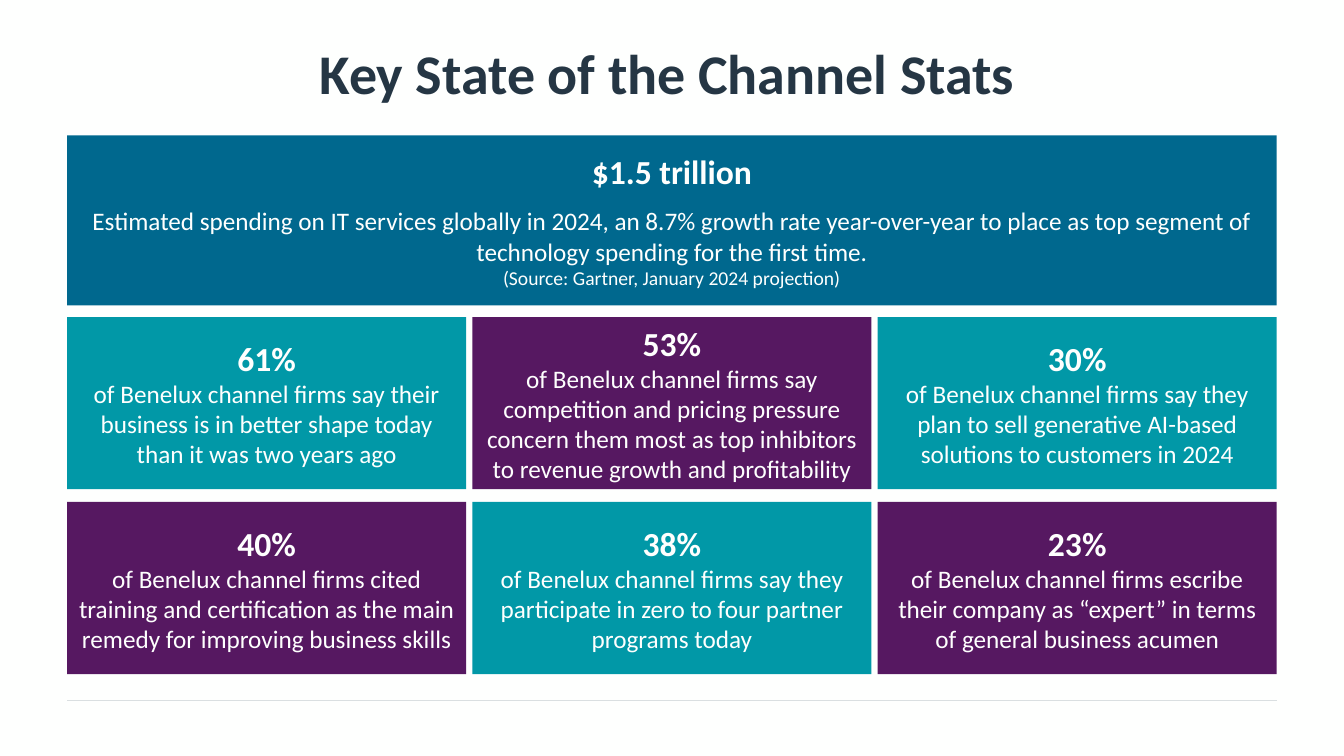
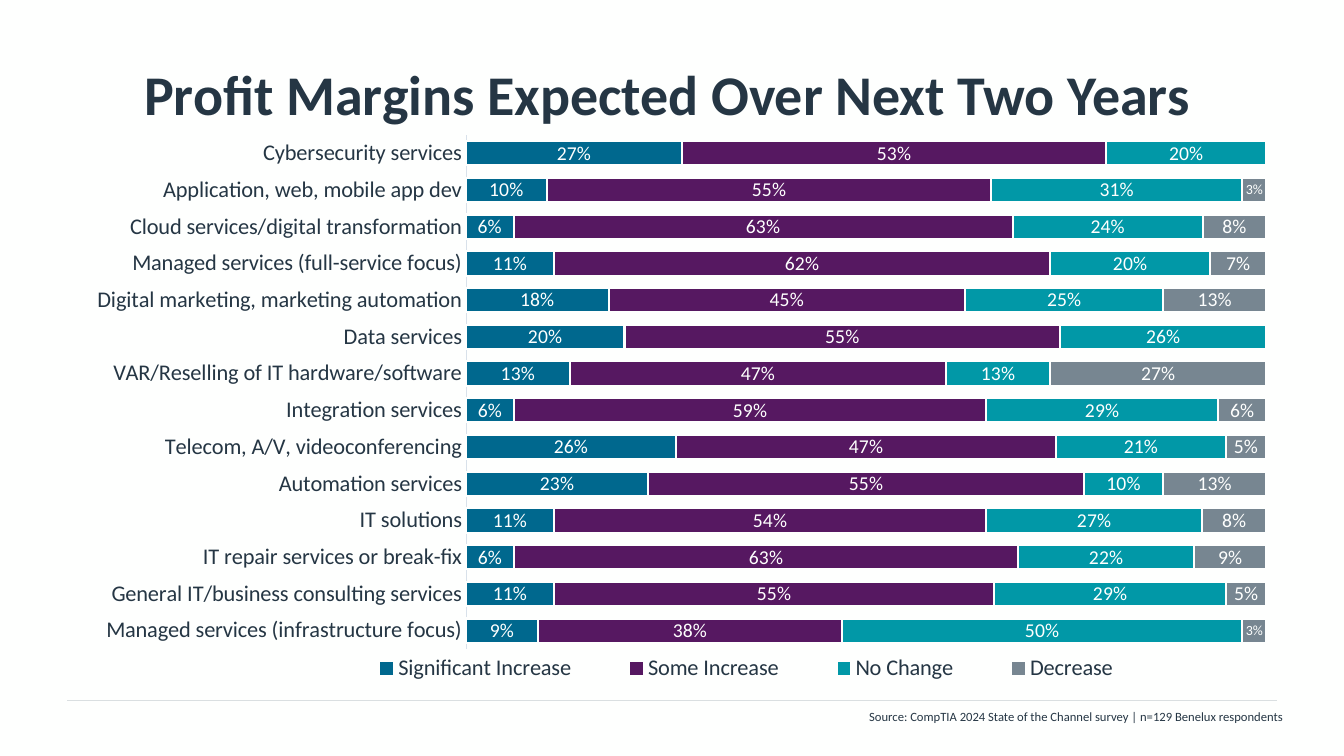
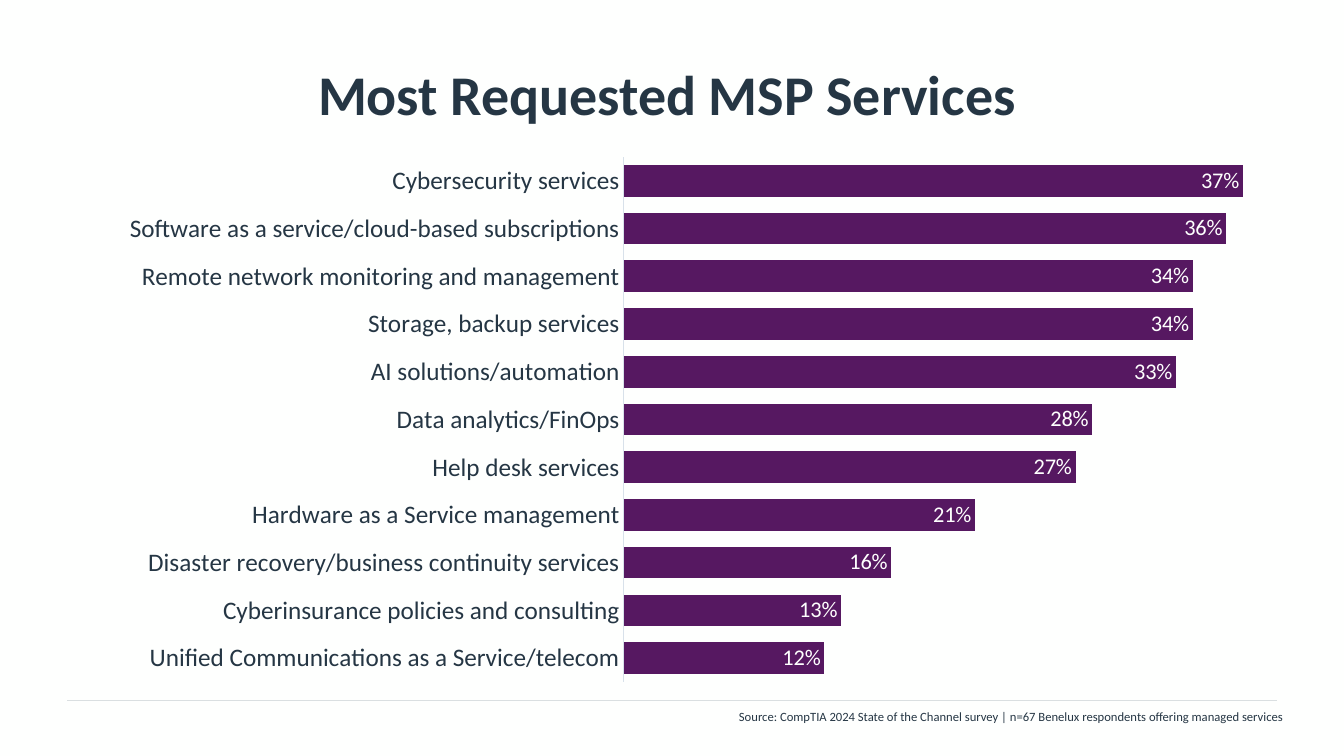
from lxml import etree
from pptx import Presentation
from pptx.chart.data import CategoryChartData
from pptx.dml.color import RGBColor
from pptx.enum.chart import (XL_CHART_TYPE, XL_LABEL_POSITION,
                             XL_LEGEND_POSITION, XL_TICK_MARK)
from pptx.enum.shapes import MSO_CONNECTOR, MSO_SHAPE
from pptx.enum.text import MSO_ANCHOR, PP_ALIGN
from pptx.oxml.ns import qn
from pptx.util import Emu, Pt

FONT = "Calibri"
WHITE = RGBColor(0xFE, 0xFF, 0xFE)
INK = RGBColor(0x25, 0x36, 0x44)
BLUE = RGBColor(0x00, 0x68, 0x8E)
TEAL = RGBColor(0x01, 0x98, 0xA7)
PURPLE = RGBColor(0x56, 0x18, 0x61)
GREY = RGBColor(0x77, 0x86, 0x91)
RULE = RGBColor(0xDA, 0xDF, 0xE1)
AXIS = RGBColor(0xD8, 0xE1, 0xEA)

MARGIN = 64
CONTENT_WIDTH = 1152
PERCENT = "0%"
PERCENT_NO_ZERO = "0%;;"

BANNER = [
    ("$1.5 trillion", 24, True, 10),
    ("Estimated spending on IT services globally in 2024, an 8.7% growth rate "
     "year-over-year to place as top segment of technology spending for the "
     "first time.", 18, False, 0),
    ("(Source: Gartner, January 2024 projection)", 14, False, 0),
]
STATS = [
    ("61%", "say their business is in better shape today than it was two years ago"),
    ("53%", "say competition and pricing pressure concern them most as top "
            "inhibitors to revenue growth and profitability"),
    ("30%", "say they plan to sell generative AI-based solutions to customers in 2024"),
    ("40%", "cited training and certification as the main remedy for improving "
            "business skills"),
    ("38%", "say they participate in zero to four partner programs today"),
    ("23%", "escribe their company as “expert” in terms of general business acumen"),
]

MARGIN_SERIES = [("Significant Increase", BLUE), ("Some Increase", PURPLE),
                 ("No Change", TEAL), ("Decrease", GREY)]
MARGINS = [
    ("Managed services (infrastructure focus)", 0.09, 0.38, 0.5, 0.03),
    ("General IT/business consulting services", 0.11, 0.55, 0.29, 0.05),
    ("IT repair services or break-fix", 0.06, 0.63, 0.22, 0.09),
    ("IT solutions", 0.11, 0.54, 0.27, 0.08),
    ("Automation services", 0.23, 0.55, 0.1, 0.13),
    ("Telecom, A/V, videoconferencing", 0.26, 0.47, 0.21, 0.05),
    ("Integration services", 0.06, 0.59, 0.29, 0.06),
    ("VAR/Reselling of IT hardware/software", 0.13, 0.47, 0.13, 0.27),
    ("Data services", 0.2, 0.55, 0.26, 0),
    ("Digital marketing, marketing automation", 0.18, 0.45, 0.25, 0.13),
    ("Managed services (full-service focus)", 0.11, 0.62, 0.2, 0.07),
    ("Cloud services/digital transformation", 0.06, 0.63, 0.24, 0.08),
    ("Application, web, mobile app dev", 0.1, 0.55, 0.31, 0.03),
    ("Cybersecurity services", 0.27, 0.53, 0.2, 0),
]
REQUESTED = [
    ("Unified Communications as a Service/telecom", 0.12),
    ("Cyberinsurance policies and consulting", 0.13),
    ("Disaster recovery/business continuity services", 0.16),
    ("Hardware as a Service management", 0.21),
    ("Help desk services", 0.27),
    ("Data analytics/FinOps", 0.28),
    ("AI solutions/automation", 0.33),
    ("Storage, backup services", 0.34),
    ("Remote network monitoring and management", 0.34),
    ("Software as a service/cloud-based subscriptions", 0.36),
    ("Cybersecurity services", 0.37),
]


def px(length):
    return Emu(length * 9525)


def box(left, top, width, height):
    return px(left), px(top), px(width), px(height)


def set_font(font, size, color, bold=False):
    font.name = FONT
    font.size = Pt(size)
    font.bold = bold
    font.color.rgb = color


def add_run(paragraph, text, size, color, bold=False):
    run = paragraph.add_run()
    run.text = text
    set_font(run.font, size, color, bold)


def add_text(slide, area, text, size, align, bold=False):
    frame = slide.shapes.add_textbox(*box(*area)).text_frame
    frame.word_wrap = True
    frame.paragraphs[0].alignment = align
    add_run(frame.paragraphs[0], text, size, INK, bold)
    return frame


def add_base_slide(presentation, title, title_top=29):
    """Add a slide with its title and the rule above the footer."""
    slide = presentation.slides.add_slide(presentation.slide_layouts[6])
    rule_y = px(667)
    rule = slide.shapes.add_connector(MSO_CONNECTOR.STRAIGHT, px(MARGIN), rule_y,
                                      px(MARGIN + CONTENT_WIDTH), rule_y)
    rule.line.color.rgb = RULE
    rule.line.width = Pt(0.5)
    etree.SubElement(rule.element.spPr, qn("a:effectLst"))
    frame = add_text(slide, (MARGIN, title_top, CONTENT_WIDTH, 120), title, 40,
                     PP_ALIGN.CENTER, True)
    frame.margin_left = 0
    frame.vertical_anchor = MSO_ANCHOR.MIDDLE
    return slide


def add_source(slide, respondents):
    add_text(slide, (608, 670, 623, 24),
             f"Source: CompTIA 2024 State of the Channel survey | {respondents}",
             9, PP_ALIGN.RIGHT)


def add_tile(slide, area, color, lines):
    """Add a filled tile; each line is (text, size, bold, space after)."""
    tile = slide.shapes.add_shape(MSO_SHAPE.RECTANGLE, *box(*area))
    tile.shadow.inherit = False
    tile.fill.solid()
    tile.fill.fore_color.rgb = color
    tile.line.fill.background()
    frame = tile.text_frame
    frame.word_wrap = True
    frame.vertical_anchor = MSO_ANCHOR.MIDDLE
    for index, (text, size, bold, space_after) in enumerate(lines):
        paragraph = frame.add_paragraph() if index else frame.paragraphs[0]
        paragraph.alignment = PP_ALIGN.CENTER
        paragraph.space_after = Pt(space_after)
        add_run(paragraph, text, size, WHITE, bold)


def set_layout(parent, index, x, y, w, h, inner=False):
    """Place a chart part by fractions of the chart area."""
    for old_layout in parent.findall(qn("c:layout")):
        parent.remove(old_layout)
    layout = etree.Element(qn("c:layout"))
    manual = etree.SubElement(layout, qn("c:manualLayout"))
    settings = [("layoutTarget", "inner")] if inner else []
    settings += [("xMode", "edge"), ("yMode", "edge"),
                 ("x", x), ("y", y), ("w", w), ("h", h)]
    for name, value in settings:
        etree.SubElement(manual, qn(f"c:{name}")).set("val", str(value))
    parent.insert(index, layout)


def add_bar_chart(slide, area, chart_type, series, rows, axis_size, axis_max,
                  label_size, label_position, plot_area):
    """Add a bar chart; rows are (category, value per series), bottom up."""
    data = CategoryChartData(number_format=PERCENT)
    categories, *columns = zip(*rows)
    data.categories = categories
    for (name, _), values in zip(series, columns):
        data.add_series(name, values)
    chart = slide.shapes.add_chart(chart_type, *box(*area), data).chart
    set_font(chart.font, 10, INK)
    chart.has_title = False
    chart.has_legend = False

    category_axis = chart.category_axis
    category_axis.major_tick_mark = XL_TICK_MARK.NONE
    category_axis.format.line.color.rgb = AXIS
    category_axis.format.line.width = Pt(0.75)
    set_font(category_axis.tick_labels.font, axis_size, INK)
    value_axis = chart.value_axis
    value_axis.minimum_scale = 0
    value_axis.maximum_scale = axis_max
    value_axis.has_major_gridlines = False
    value_axis.visible = False

    plot = chart.plots[0]
    plot.gap_width = 51
    plot.vary_by_categories = False
    for (_, color), bars in zip(series, plot.series):
        bars.format.fill.solid()
        bars.format.fill.fore_color.rgb = color
        labels = bars.data_labels
        labels.show_value = True
        labels.position = label_position
        labels.number_format = PERCENT_NO_ZERO
        labels.number_format_is_linked = False
        set_font(labels.font, label_size, WHITE)
    set_layout(chart.element.chart.plotArea, 0, *plot_area, inner=True)
    return chart


def add_legend(chart):
    chart.has_legend = True
    legend = chart.legend
    legend.position = XL_LEGEND_POSITION.BOTTOM
    legend.include_in_layout = False
    set_font(legend.font, 16, INK)
    set_layout(legend._element, 1, 0.21, 0.93, 0.67, 0.07)


def add_stats_slide(presentation):
    slide = add_base_slide(presentation, "Key State of the Channel Stats", 9)
    add_tile(slide, (MARGIN, 129, CONTENT_WIDTH, 162), BLUE, BANNER)
    columns, column_gap, row_gap, height = 3, 6, 12, 164
    width = (CONTENT_WIDTH - (columns - 1) * column_gap) // columns
    for index, (figure, finding) in enumerate(STATS):
        row, column = divmod(index, columns)
        area = (MARGIN + column * (width + column_gap),
                302 + row * (height + row_gap), width, height)
        add_tile(slide, area, PURPLE if index % 2 else TEAL,
                 [(figure, 24, True, 0),
                  (f"of Benelux channel firms {finding}", 18, False, 0)])


def add_margins_slide(presentation):
    slide = add_base_slide(presentation, "Profit Margins Expected Over Next Two Years")
    chart = add_bar_chart(slide, (MARGIN, 128, 1187, 527),
                          XL_CHART_TYPE.BAR_STACKED_100, MARGIN_SERIES, MARGINS,
                          16, 1.02, 14, XL_LABEL_POSITION.CENTER,
                          (0.32, 0, 0.655, 0.93))
    plot = chart.plots[0]
    plot.overlap = 100
    for bars in plot.series:
        bars.format.line.color.rgb = WHITE
        bars.format.line.width = Pt(1.5)
        for index, value in enumerate(bars.values):
            if 0 < value < 0.05:
                label = bars.points[index].data_label
                set_font(label.font, 10, WHITE)
                label.position = XL_LABEL_POSITION.CENTER
    add_legend(chart)
    add_source(slide, "n=129 Benelux respondents")


def add_requests_slide(presentation):
    slide = add_base_slide(presentation, "Most Requested MSP Services")
    add_bar_chart(slide, (MARGIN, 149, CONTENT_WIDTH, 501),
                  XL_CHART_TYPE.BAR_CLUSTERED, [("Series 1", PURPLE)], REQUESTED,
                  18, 0.39, 16, XL_LABEL_POSITION.INSIDE_END, (0.46, 0, 0.54, 1))
    add_source(slide, "n=67 Benelux respondents offering managed services")


def main():
    presentation = Presentation()
    presentation.slide_width = px(1280)
    presentation.slide_height = px(720)
    background = presentation.slide_master.background.fill
    background.solid()
    background.fore_color.rgb = WHITE
    add_stats_slide(presentation)
    add_margins_slide(presentation)
    add_requests_slide(presentation)
    presentation.save("out.pptx")


if __name__ == "__main__":
    main()
